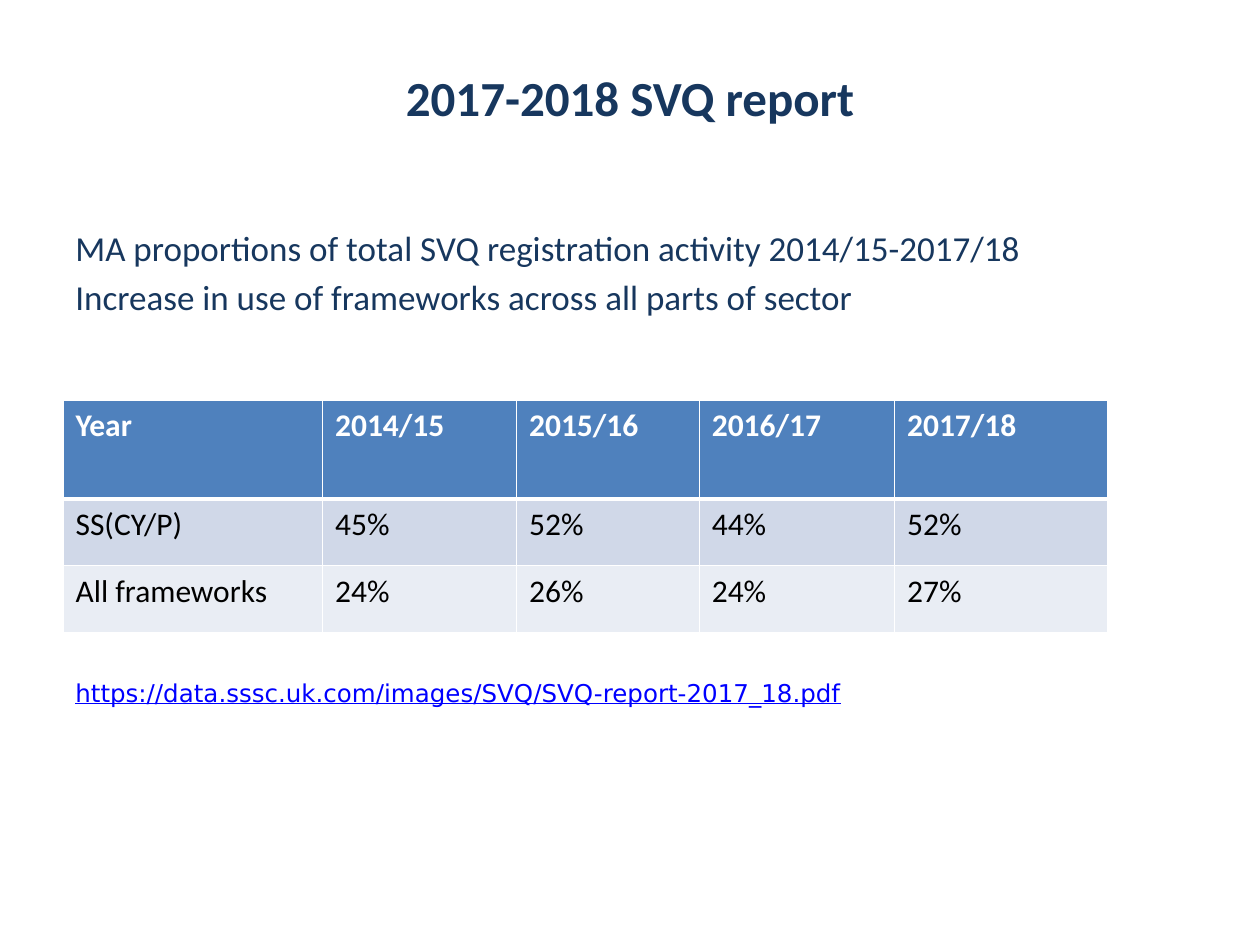
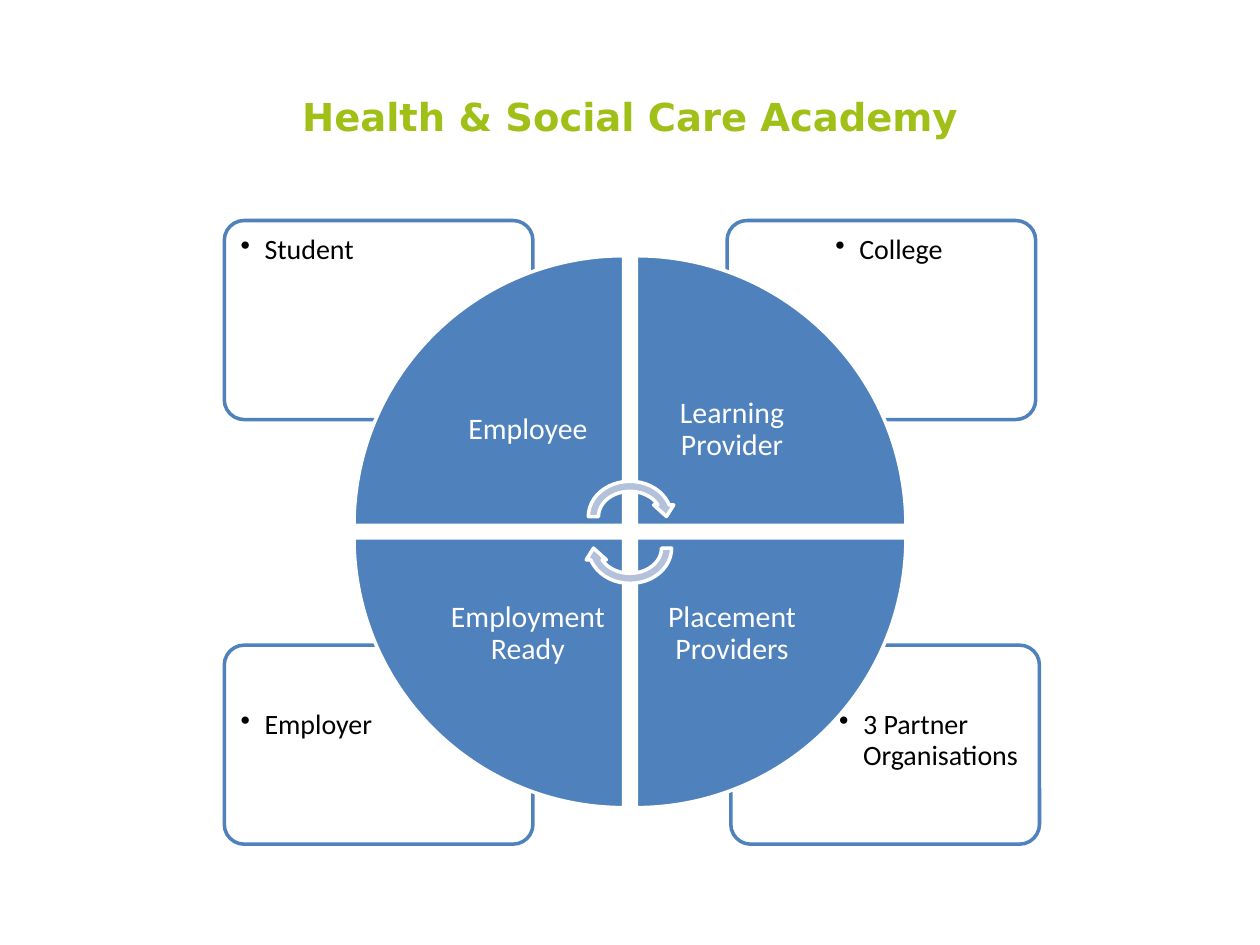
from dataclasses import dataclass

from lxml.etree import SubElement
from pptx import Presentation
from pptx.dml.color import RGBColor
from pptx.enum.shapes import MSO_SHAPE
from pptx.enum.text import MSO_ANCHOR, PP_ALIGN
from pptx.oxml.ns import qn
from pptx.util import Inches, Pt


@dataclass(frozen=True)
class Theme:
    navy: str = "17375E"
    lime: str = "A0C017"
    blue: str = "4F81BD"
    arrow: str = "B3C1DB"
    link: str = "0000FF"
    white: str = "FFFFFF"
    black: str = "000000"
    bands: tuple = ("D0D8E8", "E9EDF4")
    sans: str = "Calibri"
    wide: str = "DejaVu Sans"
    title: int = 28
    subtitle: int = 22
    body: int = 20
    cell: int = 18
    wedge: int = 17
    card: int = 16
    url: int = 14


T = Theme()
TITLE_BOX = (0.5, 0.3, 9, 1.25)


def add_text(s, box, lines, font, color, para=None, frame=None, bullet=False):
    """Add a wrapped text box; font, para and frame are dicts of format values."""
    tf = s.shapes.add_textbox(*map(Inches, box)).text_frame
    tf.word_wrap = True
    for name, value in (frame or {}).items():
        setattr(tf, name, value)
    for i, line in enumerate(lines):
        p = tf.paragraphs[0] if i == 0 else tf.add_paragraph()
        for name, value in (para or {}).items():
            if i or name != "space_before":
                setattr(p, name, value)
        if bullet:
            pPr = p._p.get_or_add_pPr()
            pPr.set("marL", str(Inches(0.19)))
            pPr.set("indent", str(Inches(-0.19)))
            SubElement(pPr, qn("a:buChar"), char="•")
        r = p.add_run()
        r.text = line
        for name, value in font.items():
            setattr(r.font, name, value)
        r.font.color.rgb = RGBColor.from_string(color)


def add_block(s, kind, box, fill, line, rotation=0):
    sp = s.shapes.add_shape(kind, *map(Inches, box))
    sp.shadow.inherit = False
    sp.rotation = rotation
    sp.fill.solid()
    sp.fill.fore_color.rgb = RGBColor.from_string(fill)
    sp.line.color.rgb = RGBColor.from_string(line)
    sp.line.width = Pt(2)
    return sp


prs = Presentation()
prs.slide_width, prs.slide_height = Inches(10), Inches(7.5)
blank = prs.slide_layouts[6]
centred = {"alignment": PP_ALIGN.CENTER}
middle = {"vertical_anchor": MSO_ANCHOR.MIDDLE}

# Slide 1: SVQ report
s = prs.slides.add_slide(blank)
add_text(s, TITLE_BOX, ["2017-2018 SVQ report"],
         {"name": T.sans, "size": Pt(T.title), "bold": True}, T.navy,
         centred, {**middle, "margin_bottom": Inches(0.36)})
add_text(s, (0.5, 1.75, 9, 1), [
    "MA proportions of total SVQ registration activity 2014/15-2017/18",
    "Increase in use of frameworks across all parts of sector",
], {"name": T.sans, "size": Pt(T.body)}, T.navy, {"space_before": Pt(4)})

rows = [
    ("Year", "2014/15", "2015/16", "2016/17", "2017/18"),
    ("SS(CY/P)", "45%", "52%", "44%", "52%"),
    ("All frameworks", "24%", "26%", "24%", "27%"),
]
widths = (2.06, 1.54, 1.45, 1.55, 1.69)
heights = (0.78, 0.53, 0.53)
table = s.shapes.add_table(len(rows), len(widths), *map(
    Inches, (0.5, 3.18, sum(widths), sum(heights)))).table
for col, width in zip(table.columns, widths):
    col.width = Inches(width)
for i, (values, height) in enumerate(zip(rows, heights)):
    table.rows[i].height = Inches(height)
    header = i == 0
    for j, value in enumerate(values):
        cell = table.cell(i, j)
        tcPr = cell._tc.get_or_add_tcPr()
        for side in ("L", "R", "T", "B"):
            thick = (header and side == "B") or (i == 1 and side == "T")
            ln = SubElement(tcPr, qn(f"a:ln{side}"), w=str(Pt(3 if thick else 1)))
            SubElement(SubElement(ln, qn("a:solidFill")), qn("a:srgbClr"), val=T.white)
        cell.fill.solid()
        cell.fill.fore_color.rgb = RGBColor.from_string(
            T.blue if header else T.bands[i - 1])
        r = cell.text_frame.paragraphs[0].add_run()
        r.text = value
        for name, setting in {"name": T.sans, "size": Pt(T.cell), "bold": header}.items():
            setattr(r.font, name, setting)
        r.font.color.rgb = RGBColor.from_string(T.white if header else T.black)

add_text(s, (0.5, 5.33, 9, 0.35),
         ["https://data.sssc.uk.com/images/SVQ/SVQ-report-2017_18.pdf"],
         {"name": T.wide, "size": Pt(T.url), "underline": True}, T.link)

# Slide 2: academy cycle
s = prs.slides.add_slide(blank)
add_text(s, TITLE_BOX, ["Health & Social Care Academy"],
         {"name": T.wide, "size": Pt(T.subtitle), "bold": True}, T.lime,
         centred, middle)

sides = ("margin_left", "margin_right", "margin_top", "margin_bottom")
cards = [
    ("3 Partner Organisations", 5.8, 5.12, 0.77, 0.43),
    ("Employer", 1.78, 5.12, 0.04, 0.43),
    ("College", 5.77, 1.75, 0.77, 0.03),
    ("Student", 1.78, 1.75, 0.04, 0.03),
]
for label, x, y, dx, dy in cards:
    sp = add_block(s, MSO_SHAPE.ROUNDED_RECTANGLE, (x, y, 2.45, 1.58), T.white, T.blue)
    sp.adjustments[0] = 0.1
    add_text(s, (x + dx, y + dy, 1.64, 1.12), [label],
             {"name": T.sans, "size": Pt(T.card)}, T.black,
             {"line_spacing": 0.9}, dict.fromkeys(sides, Inches(0.09)), bullet=True)

# Wedges run clockwise from the top left; labels sit at the inner corner
wedge, label_size, gap = 2.14, 1.52, 0.1
left, top = 2.81, 2.03
wedges = [("Employee", 0, 0), ("Learning Provider", 1, 0),
          ("Placement Providers", 1, 1), ("Employment Ready", 0, 1)]
for i, (label, col, row) in enumerate(wedges):
    x, y = left + col * (wedge + gap), top + row * (wedge + gap)
    add_block(s, MSO_SHAPE.PIE_WEDGE, (x, y, wedge, wedge), T.blue, T.white, 90 * i)
    inset = wedge - label_size
    add_text(s, (x + inset * (1 - col), y + inset * (1 - row), label_size, label_size),
             [label], {"name": T.sans, "size": Pt(T.wedge)}, T.white,
             {**centred, "line_spacing": 0.9},
             {**middle, **dict.fromkeys(sides, Inches(0.13))})

for y, rotation in ((3.78, 0), (4.03, 180)):
    add_block(s, MSO_SHAPE.CIRCULAR_ARROW, (4.63, y, 0.74, 0.64),
              T.arrow, T.white, rotation)

prs.save("out.pptx")
